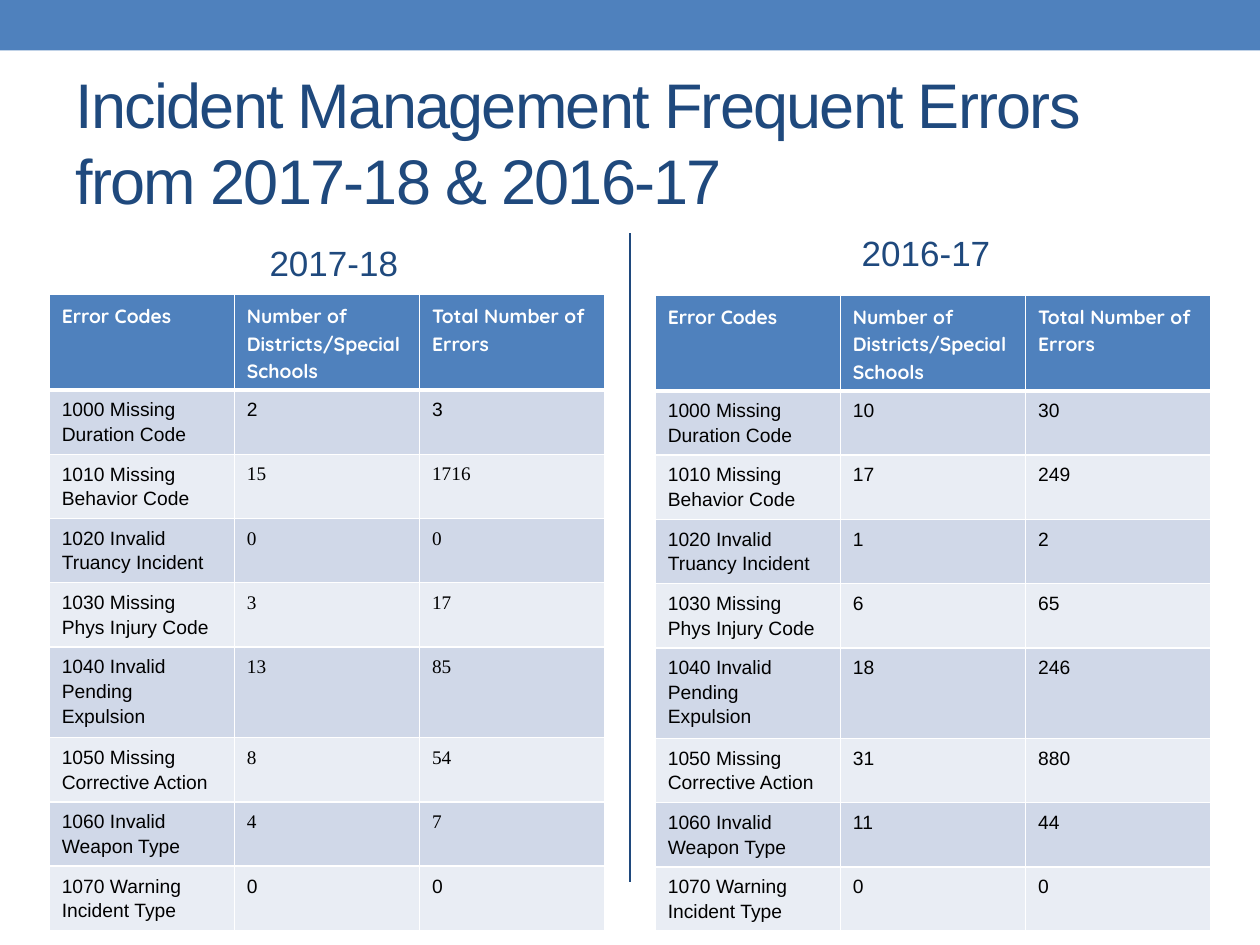
from dataclasses import dataclass

from lxml import etree
from pptx import Presentation
from pptx.dml.color import RGBColor
from pptx.enum.shapes import MSO_CONNECTOR, MSO_SHAPE
from pptx.enum.text import MSO_ANCHOR, MSO_AUTO_SIZE, PP_ALIGN
from pptx.oxml.ns import qn
from pptx.util import Pt

RECTANGLE = MSO_SHAPE.RECTANGLE
STRAIGHT = MSO_CONNECTOR.STRAIGHT
MIDDLE = MSO_ANCHOR.MIDDLE
NO_AUTOFIT = MSO_AUTO_SIZE.NONE
LEFT, CENTER = PP_ALIGN.LEFT, PP_ALIGN.CENTER


@dataclass(frozen=True)
class Theme:
    accent: str = "4F81BD"
    navy: str = "1F497D"
    white: str = "FFFFFF"
    black: str = "000000"
    bands: tuple = ("D0D8E8", "E9EDF4")
    body_font: str = "Arial"
    header_font: str = "Quicksand"
    figure_font: str = "Times New Roman"
    title_size: int = 36
    year_size: int = 20
    table_size: int = 11


theme = Theme()


def add_run(paragraph, text, font, size, color, bold=False):
    run = paragraph.add_run()
    run.text = text
    run.font.name = font
    run.font.size = Pt(size)
    run.font.bold = bold
    run.font.color.rgb = RGBColor.from_string(color)
    return run


def add_borders(cell, bottom_width):
    properties = cell._tc.get_or_add_tcPr()
    for side, width in (("L", 1), ("R", 1), ("T", 1), ("B", bottom_width)):
        border = etree.SubElement(properties, qn(f"a:ln{side}"), w=str(Pt(width)))
        fill = etree.SubElement(border, qn("a:solidFill"))
        etree.SubElement(fill, qn("a:srgbClr"), val=theme.white)


headers = ["Error Codes", "Number of Districts/Special Schools", "Total Number of Errors"]
error_codes = [
    "1000 Missing Duration Code",
    "1010 Missing Behavior Code",
    "1020 Invalid Truancy Incident",
    "1030 Missing Phys Injury Code",
    "1040 Invalid Pending Expulsion",
    "1050 Missing Corrective Action",
    "1060 Invalid Weapon Type",
    "1070 Warning Incident Type",
]
row_heights = [51.84] + [36.72] * 4 + [51.84] + [36.72] * 3
column_width = 105.84

years = [
    {
        "label": "2017-18", "placeholder": 1, "label_box": (36, 131.76, 309.6, 36),
        "table_at": (28.08, 168), "serif_rows": range(2, 8),
        "districts": [2, 15, 0, 3, 13, 8, 4, 0],
        "errors": [3, 1716, 0, 17, 85, 54, 7, 0],
    },
    {
        "label": "2016-17", "placeholder": 3, "label_box": (374.4, 120.24, 309.6, 48.24),
        "table_at": (374.4, 168.5), "serif_rows": (),
        "districts": [10, 17, 1, 6, 18, 31, 11, 0],
        "errors": [30, 249, 2, 65, 246, 880, 44, 0],
    },
]

prs = Presentation()
prs.slide_width, prs.slide_height = Pt(720), Pt(540)
slide = prs.slides.add_slide(prs.slide_layouts[4])
placeholders = {item.placeholder_format.idx: item for item in slide.placeholders}
for idx in (2, 4, 10, 11, 12):
    if idx in placeholders:
        unused = placeholders[idx]._element
        unused.getparent().remove(unused)

band = slide.shapes.add_shape(RECTANGLE, 0, 0, Pt(720), Pt(28.8))
band.shadow.inherit = False
band.fill.solid()
band.fill.fore_color.rgb = RGBColor.from_string(theme.accent)
band.line.fill.background()

divider = slide.shapes.add_connector(STRAIGHT, Pt(360), Pt(133.2), Pt(360), Pt(504))
divider.line.color.rgb = RGBColor.from_string(theme.navy)
divider.line.width = Pt(1.5)
etree.SubElement(divider._element.spPr, qn("a:effectLst"))

title = slide.shapes.title
title.left, title.top, title.width, title.height = Pt(36), Pt(41.76), Pt(648), Pt(77.76)
title.text_frame.auto_size = NO_AUTOFIT
title.text_frame.vertical_anchor = MIDDLE
heading = title.text_frame.paragraphs[0]
heading.alignment = LEFT
heading_run = add_run(heading, "Incident Management Frequent Errors from 2017-18 & 2016-17",
                      theme.body_font, theme.title_size, theme.navy)
heading_run.font._element.set("spc", "-100")

for year in years:
    label = placeholders[year["placeholder"]]
    label.left, label.top, label.width, label.height = map(Pt, year["label_box"])
    label.text_frame.auto_size = NO_AUTOFIT
    label.text_frame.vertical_anchor = MIDDLE
    caption = label.text_frame.paragraphs[0]
    caption.alignment = CENTER
    add_run(caption, year["label"], theme.body_font, theme.year_size, theme.navy)

    left, top = year["table_at"]
    rows = [headers, *zip(error_codes, year["districts"], year["errors"])]
    table = slide.shapes.add_table(
        len(rows), len(headers), Pt(left), Pt(top),
        Pt(column_width * len(headers)), Pt(sum(row_heights))).table
    for column in table.columns:
        column.width = Pt(column_width)
    for r, values in enumerate(rows):
        table.rows[r].height = Pt(row_heights[r])
        is_header = r == 0
        for c, value in enumerate(values):
            cell = table.cell(r, c)
            add_borders(cell, 3 if is_header else 1)
            cell.fill.solid()
            shade = theme.accent if is_header else theme.bands[(r - 1) % 2]
            cell.fill.fore_color.rgb = RGBColor.from_string(shade)
            font = theme.header_font if is_header else theme.body_font
            if c > 0 and r in year["serif_rows"]:
                font = theme.figure_font
            entry = cell.text_frame.paragraphs[0]
            entry.line_spacing = 1.15
            add_run(entry, str(value), font, theme.table_size,
                    theme.white if is_header else theme.black, is_header)

prs.save("out.pptx")
